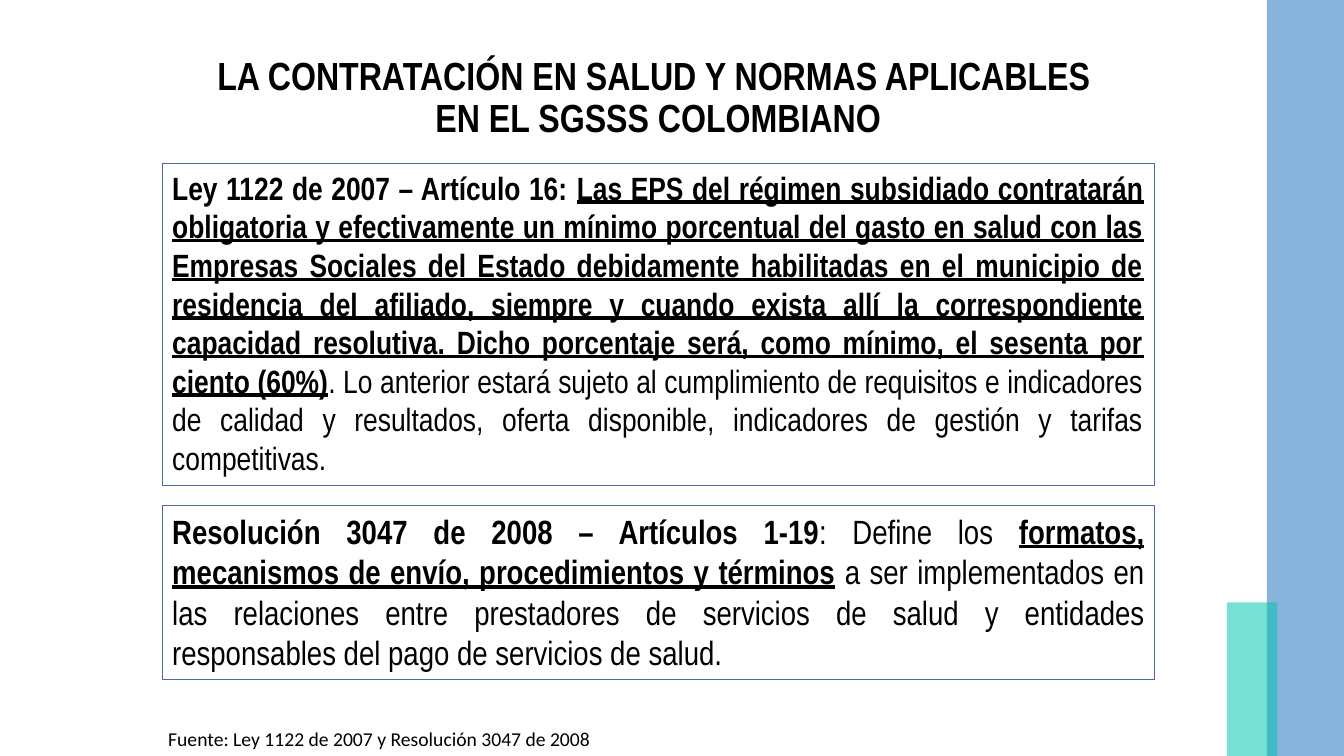
from lxml import etree
from pptx import Presentation
from pptx.dml.color import RGBColor
from pptx.enum.shapes import MSO_SHAPE
from pptx.enum.text import MSO_ANCHOR, MSO_AUTO_SIZE, PP_ALIGN
from pptx.oxml.ns import qn
from pptx.util import Cm, Pt

RECTANGLE = MSO_SHAPE.RECTANGLE
TOP, MIDDLE = MSO_ANCHOR.TOP, MSO_ANCHOR.MIDDLE
CENTER, JUSTIFY = PP_ALIGN.CENTER, PP_ALIGN.JUSTIFY
NO_AUTOFIT = MSO_AUTO_SIZE.NONE

BLACK = RGBColor(0x00, 0x00, 0x00)
BLUE = RGBColor(0x62, 0x9D, 0xD1)
TEAL = RGBColor(0x00, 0xC3, 0xB1)
BORDER = RGBColor(0x4A, 0x66, 0xAC)


def write(para, text, size, font="Arial Narrow", bold=False, underline=False):
    span = para.add_run()
    span.text = text
    span.font.size = Pt(size)
    span.font.name = font
    span.font.bold = bold
    span.font.underline = underline
    span.font.color.rgb = BLACK


deck = Presentation()
deck.slide_width, deck.slide_height = Cm(33.87), Cm(19.05)
page = deck.slides.add_slide(deck.slide_layouts[5])

# Translucent bands on the right edge
bands = [
    (31.93, 0, 1.94, 19.05, BLUE, 75),
    (30.92, 15.18, 1.27, 3.87, TEAL, 53),
]
for left, top, width, height, color, opacity in bands:
    band = page.shapes.add_shape(RECTANGLE, Cm(left), Cm(top), Cm(width), Cm(height))
    band.shadow.inherit = False
    band.line.fill.background()
    band.fill.solid()
    band.fill.fore_color.rgb = color
    color_node = band.fill._xPr.find(qn("a:solidFill"))[0]
    etree.SubElement(color_node, qn("a:alpha"), val=str(opacity * 1000))

# Title
title = page.shapes.title
title.left, title.top, title.width, title.height = Cm(1.98), Cm(1.55), Cm(29.21), Cm(1.88)
title.text_frame.word_wrap = True
title.text_frame.auto_size = NO_AUTOFIT
title.text_frame.vertical_anchor = MIDDLE
para = title.text_frame.paragraphs[0]
para.alignment = CENTER
para.line_spacing = 0.9
write(para, "LA CONTRATACIÓN EN SALUD Y NORMAS APLICABLES ", 28, bold=True)
para.add_line_break()
write(para, "EN EL SGSSS COLOMBIANO", 28, bold=True)

# Framed legal texts: top, height, text size, spans with their format
KEY = {"bold": True}
STRESSED = {"bold": True, "underline": True}
norms = [
    (4.11, 8.13, 23, [
        ("Ley 1122 de 2007 – Artículo 16: ", KEY),
        ("Las EPS del régimen subsidiado contratarán obligatoria y efectivamente "
         "un mínimo porcentual del gasto en salud con las Empresas Sociales del "
         "Estado debidamente habilitadas en el municipio de residencia del afiliado, "
         "siempre y cuando exista allí la correspondiente capacidad resolutiva. "
         "Dicho porcentaje será, como mínimo, el sesenta por ciento (60%)", STRESSED),
        (". Lo anterior estará sujeto al cumplimiento de requisitos e indicadores "
         "de calidad y resultados, oferta disponible, indicadores de gestión y "
         "tarifas competitivas.", {}),
    ]),
    (12.75, 4.37, 24, [
        ("Resolución 3047 de 2008 – Artículos 1-19", KEY),
        (": Define los ", {}),
        ("formatos, mecanismos de envío, procedimientos y términos", STRESSED),
        (" a ser implementados en las relaciones entre prestadores de servicios de "
         "salud y entidades responsables del pago de servicios de salud.", {}),
    ]),
]
for top, height, size, spans in norms:
    box = page.shapes.add_shape(RECTANGLE, Cm(4.09), Cm(top), Cm(25), Cm(height))
    box.shadow.inherit = False
    box.fill.background()
    box.line.color.rgb = BORDER
    box.line.width = Pt(0.75)
    box.text_frame.word_wrap = True
    box.text_frame.vertical_anchor = TOP
    para = box.text_frame.paragraphs[0]
    para.alignment = JUSTIFY
    for text, style in spans:
        write(para, text, size, **style)

# Source note
note = page.shapes.add_textbox(Cm(3.99), Cm(18.19), Cm(21.69), Cm(0.86))
note.text_frame.word_wrap = True
para = note.text_frame.paragraphs[0]
para.alignment = JUSTIFY
write(para, "Fuente: Ley 1122 de 2007 y Resolución 3047 de 2008", 14, font="Calibri")

deck.save("out.pptx")
